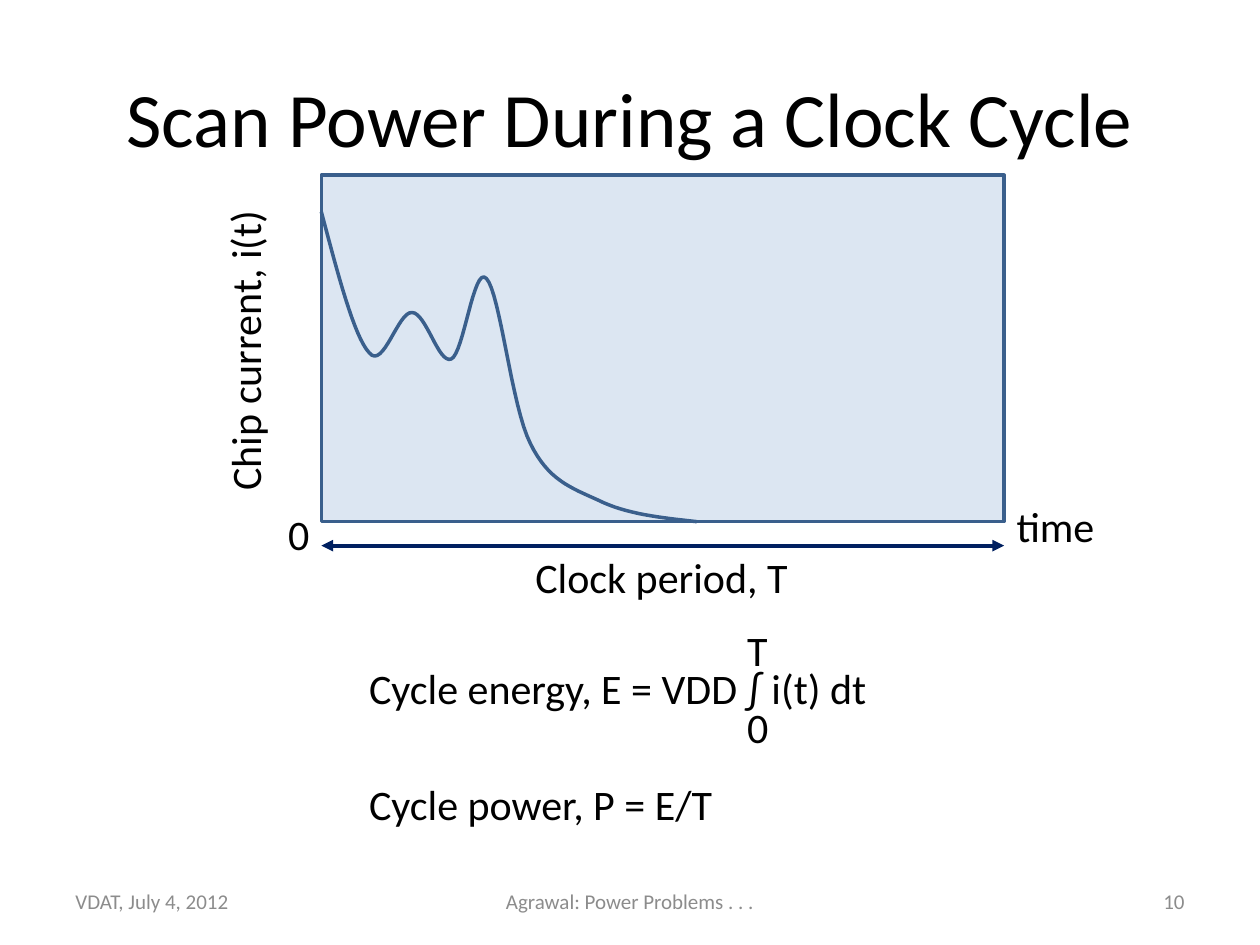
from pptx import Presentation
from pptx.dml.color import RGBColor
from pptx.enum.shapes import MSO_CONNECTOR, MSO_SHAPE
from pptx.enum.text import MSO_ANCHOR, PP_ALIGN
from pptx.oxml.ns import qn
from pptx.util import Pt
from lxml.etree import SubElement

BLACK = RGBColor(0x00, 0x00, 0x00)
GREY = RGBColor(0x8C, 0x8C, 0x8C)
PALE_BLUE = RGBColor(0xDC, 0xE6, 0xF2)
STEEL_BLUE = RGBColor(0x3A, 0x5F, 0x8C)
NAVY = RGBColor(0x00, 0x20, 0x60)
FONT = "Calibri"

CURRENT_CURVE = [
    (0, 20.9), (9.4, 56.2), (18.7, 92.2), (27.4, 101.5), (35.3, 111.6),
    (43.9, 77.8), (51.8, 78.5), (59.8, 78.5), (67, 108), (74.2, 105.1),
    (81.4, 102.2), (87.1, 51.1), (94.3, 59), (102.2, 67), (108.7, 132.5),
    (119.5, 153.4), (129.6, 174.2), (142.6, 178.6), (158.4, 185.8),
    (174.2, 193.7), (194.4, 195.8), (214.6, 198),
]


def write(para, text, size=24, color=BLACK, align=PP_ALIGN.LEFT):
    """Put one formatted span of text in a paragraph."""
    para.alignment = align
    span = para.add_run()
    span.text = text
    span.font.name = FONT
    span.font.size = Pt(size)
    span.font.color.rgb = color


def add_text(page, text, left, top, width, height, wrap=False,
             anchor=MSO_ANCHOR.TOP, rotation=0, **style):
    """Add a text box with a single paragraph."""
    box = page.shapes.add_textbox(Pt(left), Pt(top), Pt(width), Pt(height))
    box.rotation = rotation
    frame = box.text_frame
    frame.word_wrap = wrap
    frame.vertical_anchor = anchor
    write(frame.paragraphs[0], text, **style)
    return box


def add_title(page, text, left, top, width, height):
    """Place and format the title placeholder."""
    title = page.shapes.title
    title.left, title.top = Pt(left), Pt(top)
    title.width, title.height = Pt(width), Pt(height)
    title.text_frame.vertical_anchor = MSO_ANCHOR.MIDDLE
    write(title.text_frame.paragraphs[0], text, size=44, align=PP_ALIGN.CENTER)


def bezier_points(knots, steps=16):
    """Return points along a chain of cubic Bezier segments."""
    points = [knots[0]]
    for first in range(0, len(knots) - 1, 3):
        segment = knots[first:first + 4]
        for step in range(1, steps + 1):
            t = step / steps
            weights = ((1 - t) ** 3, 3 * t * (1 - t) ** 2, 3 * t * t * (1 - t), t ** 3)
            points.append(tuple(sum(w * knot[axis] for w, knot in zip(weights, segment))
                                for axis in (0, 1)))
    return points


def add_curve(page, left, top):
    """Draw the chip current curve from the plot's top left corner."""
    points = [(Pt(left + x), Pt(top + y)) for x, y in bezier_points(CURRENT_CURVE)]
    builder = page.shapes.build_freeform(*points[0])
    builder.add_line_segments(points[1:], close=False)
    curve = builder.convert_to_shape()
    curve.shadow.inherit = False
    curve.fill.background()
    curve.line.color.rgb = STEEL_BLUE
    curve.line.width = Pt(2)


def add_period_arrow(page, left, top, width):
    """Draw the double-headed arrow that spans the clock period."""
    arrow = page.shapes.add_connector(
        MSO_CONNECTOR.STRAIGHT, Pt(left), Pt(top), Pt(left + width), Pt(top))
    arrow.line.color.rgb = NAVY
    arrow.line.width = Pt(2.25)
    line = arrow.line._get_or_add_ln()
    for end in ("a:headEnd", "a:tailEnd"):
        SubElement(line, qn(end), type="triangle")
    SubElement(arrow._element.spPr, qn("a:effectLst"))


def add_plot(page, left, top, width, height):
    """Draw the current plot with its curve, arrow and axis labels."""
    area = page.shapes.add_shape(
        MSO_SHAPE.RECTANGLE, Pt(left), Pt(top), Pt(width), Pt(height))
    area.shadow.inherit = False
    area.fill.solid()
    area.fill.fore_color.rgb = PALE_BLUE
    area.line.color.rgb = STEEL_BLUE
    area.line.width = Pt(2)
    add_curve(page, left, top)
    bottom = top + height
    add_period_arrow(page, left, bottom + 13.7, width)
    add_text(page, "Clock period, T", left + 115.2, bottom + 13.7, 160, 36)
    add_text(page, "time", left + width, bottom - 15.8, 60, 36)
    add_text(page, "Chip current, i(t)", left - 131.8, top + 81.4, 175.7, 36, rotation=270)
    add_text(page, "0", left - 26, bottom - 10.8, 26.6, 36)


def add_formulas(page, left, top, width, height):
    """Write the energy integral with its limits, and the power formula."""
    lines = [("T", 216, 0), ("Cycle energy, E = VDD ∫ i(t) dt", 0, 0),
             ("0", 216, 0), ("Cycle power, P = E/T", 0, 22)]
    box = page.shapes.add_textbox(Pt(left), Pt(top), Pt(width), Pt(height))
    frame = box.text_frame
    frame.word_wrap = False
    for index, (text, indent, gap) in enumerate(lines):
        para = frame.add_paragraph() if index else frame.paragraphs[0]
        para.line_spacing = Pt(22)
        para.space_before = Pt(gap)
        para._p.get_or_add_pPr().set("marL", str(Pt(indent)))
        write(para, text)


def add_footer(page, left, top, width, height):
    """Write the date, the talk's name and the page number."""
    parts = [("VDAT, July 4, 2012", 0, 168, PP_ALIGN.LEFT),
             ("Agrawal: Power Problems . . .", (width - 228) / 2, 228, PP_ALIGN.CENTER),
             ("10", width - 168, 168, PP_ALIGN.RIGHT)]
    for text, offset, part_width, align in parts:
        add_text(page, text, left + offset, top, part_width, height, wrap=True,
                 anchor=MSO_ANCHOR.MIDDLE, size=12, color=GREY, align=align)


def main():
    """Build and save the slide."""
    deck = Presentation()
    deck.slide_width, deck.slide_height = Pt(720), Pt(540)
    page = deck.slides.add_slide(deck.slide_layouts[5])
    add_title(page, "Scan Power During a Clock Cycle", 36, 21.6, 648, 90)
    add_footer(page, 36, 500.5, 648, 28.75)
    add_plot(page, 183.6, 100.1, 390.2, 198)
    add_formulas(page, 203.8, 360, 301, 118)
    deck.save("out.pptx")


if __name__ == "__main__":
    main()
